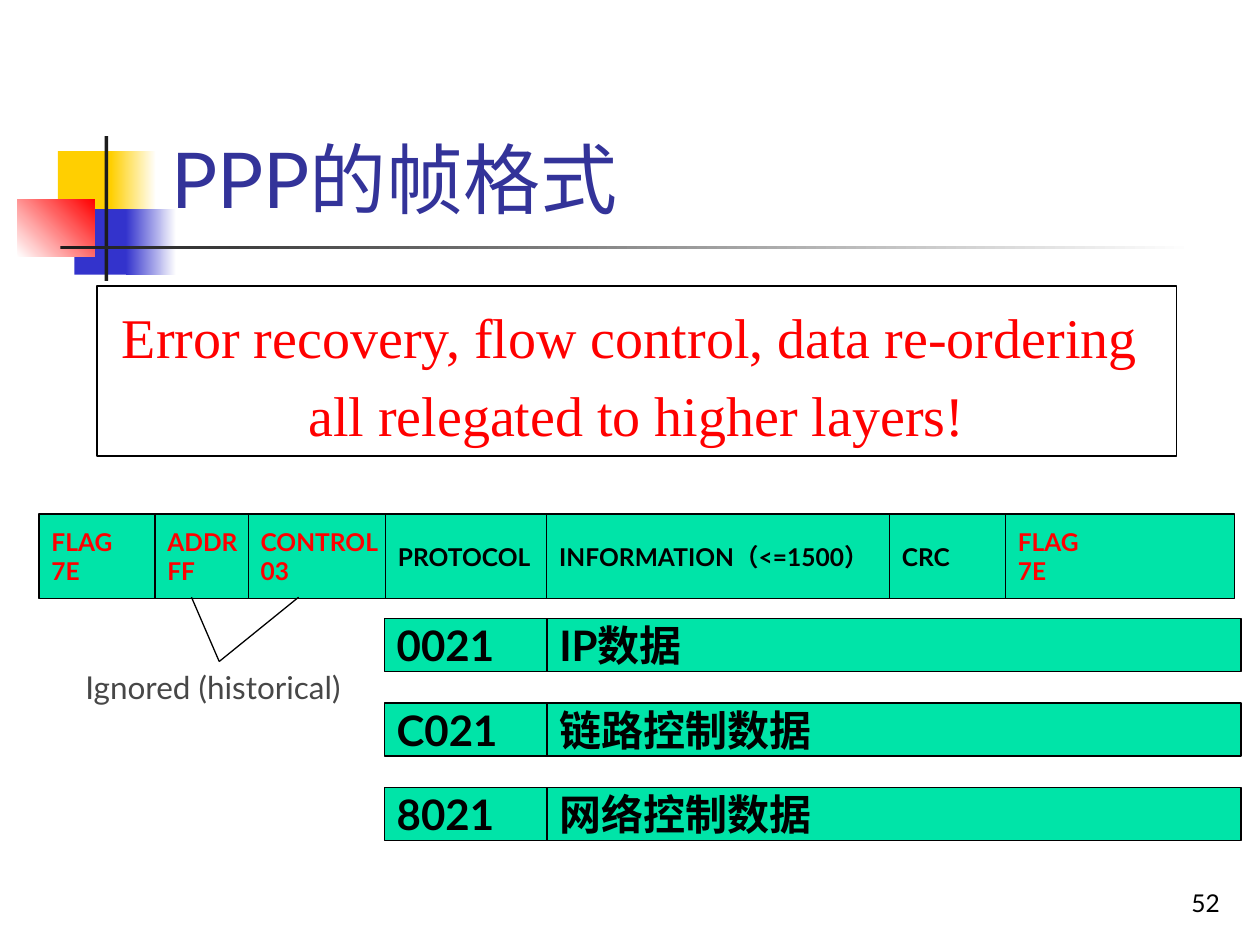
"""Build the slide on the PPP frame format."""
from pptx import Presentation
from pptx.dml.color import RGBColor
from pptx.enum.shapes import MSO_CONNECTOR as CONN, MSO_SHAPE as SHAPE
from pptx.enum.text import MSO_ANCHOR as ANCHOR, PP_ALIGN as ALIGN
from pptx.oxml.ns import qn
from pptx.util import Inches, Pt
from lxml import etree

BLACK = RGBColor(0x00, 0x00, 0x00)
WHITE = RGBColor(0xFF, 0xFF, 0xFF)
RED = RGBColor(0xFF, 0x00, 0x00)
GREEN = RGBColor(0x00, 0xE4, 0xA8)
YELLOW = RGBColor(0xFF, 0xCF, 0x01)
BLUE = RGBColor(0x33, 0x33, 0xCC)
NAVY = RGBColor(0x33, 0x33, 0x99)
DARK = RGBColor(0x1C, 0x1C, 0x1C)
GREY = RGBColor(0x47, 0x47, 0x47)

prs = Presentation()
prs.slide_width, prs.slide_height = Inches(10), Inches(7.5)
slide = prs.slides.add_slide(prs.slide_layouts[6])


def add_box(x, y, w, h, colors=(), outline=False):
    s = slide.shapes.add_shape(SHAPE.RECTANGLE, Inches(x), Inches(y), Inches(w), Inches(h))
    s.shadow.inherit = False
    if len(colors) == 2:
        s.fill.gradient()
        s.fill.gradient_angle = 0
        for stop, color, pos in zip(s.fill.gradient_stops, colors, (0, 1)):
            stop.color.rgb = color
            stop.position = pos
    elif colors:
        s.fill.solid()
        s.fill.fore_color.rgb = colors[0]
    else:
        s.fill.background()
    if outline:
        s.line.color.rgb = BLACK
        s.line.width = Pt(0.75)
    else:
        s.line.fill.background()
    return s


def add_text(s, lines, size, color, bold=False, font="Lato",
             align=ALIGN.LEFT, anchor=ANCHOR.MIDDLE, wrap=False):
    tf = s.text_frame
    tf.word_wrap = wrap
    tf.vertical_anchor = anchor
    for i, line in enumerate(lines):
        p = tf.add_paragraph() if i else tf.paragraphs[0]
        p.alignment = align
        r = p.add_run()
        r.text = line
        r.font.name = font
        r.font.size = Pt(size)
        r.font.bold = bold
        r.font.color.rgb = color
    return tf


add_box(0.46, 1.2, 0.48, 0.52, [YELLOW])
add_box(0.88, 1.2, 0.36, 0.52, [YELLOW, WHITE])
add_box(0.59, 1.66, 0.46, 0.52, [BLUE])
add_box(1, 1.66, 0.4, 0.52, [BLUE, WHITE])
red_box = add_box(0.14, 1.58, 0.61, 0.46, [WHITE, RED])
red_box.fill.gradient_angle = 45
add_box(0.83, 1.08, 0.03, 1.15, [DARK])
add_box(0.48, 1.95, 9, 0.03, [DARK, WHITE])

number = slide.shapes.add_textbox(Inches(7.7), Inches(6.83), Inches(2.08), Inches(0.5))
add_text(number, ["52"], 14, BLACK, align=ALIGN.RIGHT, anchor=ANCHOR.BOTTOM, wrap=True)
title = slide.shapes.add_textbox(Inches(1.26), Inches(0.23), Inches(8.52), Inches(1.6))
add_text(title, ["PPP的帧格式"], 44, NAVY, anchor=ANCHOR.BOTTOM, wrap=True)

frame_fields = [
    (0.31, 1.82, ["FLAG", "7E"], RED),
    (1.23, 1.82, ["ADDR", "FF"], RED),
    (1.97, 1.95, ["CONTROL", "03"], RED),
    (3.06, 1.82, ["PROTOCOL"], BLACK),
    (4.34, 5.43, ["INFORMATION（<=1500）"], BLACK),
    (7.06, 1.82, ["CRC"], BLACK),
    (7.98, 1.82, ["FLAG", "7E"], RED),
]
for x, w, lines, color in frame_fields:
    add_text(add_box(x, 4.08, w, 0.67, [GREEN], True), lines, 14, color, True)

protocols = [("0021", "IP数据"), ("C021", "链路控制数据"), ("8021", "网络控制数据")]
for i, (code, payload) in enumerate(protocols):
    y = 4.91 + 0.67 * i
    for x, w, text in ((3.05, 1.56, code), (4.34, 5.51, payload)):
        add_text(add_box(x, y, w, 0.42, [GREEN], True), [text], 24, BLACK, True)

label = slide.shapes.add_textbox(Inches(0.58), Inches(5.25), Inches(2.33), Inches(0.4))
tf = add_text(label, ["Ignored (historical)"], 18, GREY, anchor=ANCHOR.TOP)
tf.paragraphs[0].space_before = Pt(6)

for x in (1.52, 2.37):
    s = slide.shapes.add_connector(CONN.STRAIGHT, Inches(x), Inches(4.74),
                                   Inches(1.74), Inches(5.25))
    s.line.color.rgb = BLACK
    s.line.width = Pt(0.75)
    etree.SubElement(s.element.spPr, qn("a:effectLst"))

note = add_box(0.77, 2.27, 8.57, 1.35, outline=True)
tf = add_text(note, ["Error recovery, flow control, data re-ordering ",
                     "all relegated to higher layers!"],
              32, RED, font="Times New Roman", align=ALIGN.CENTER,
              anchor=ANCHOR.TOP, wrap=True)
for p in tf.paragraphs:
    p.line_spacing = 1.16

prs.save("out.pptx")
